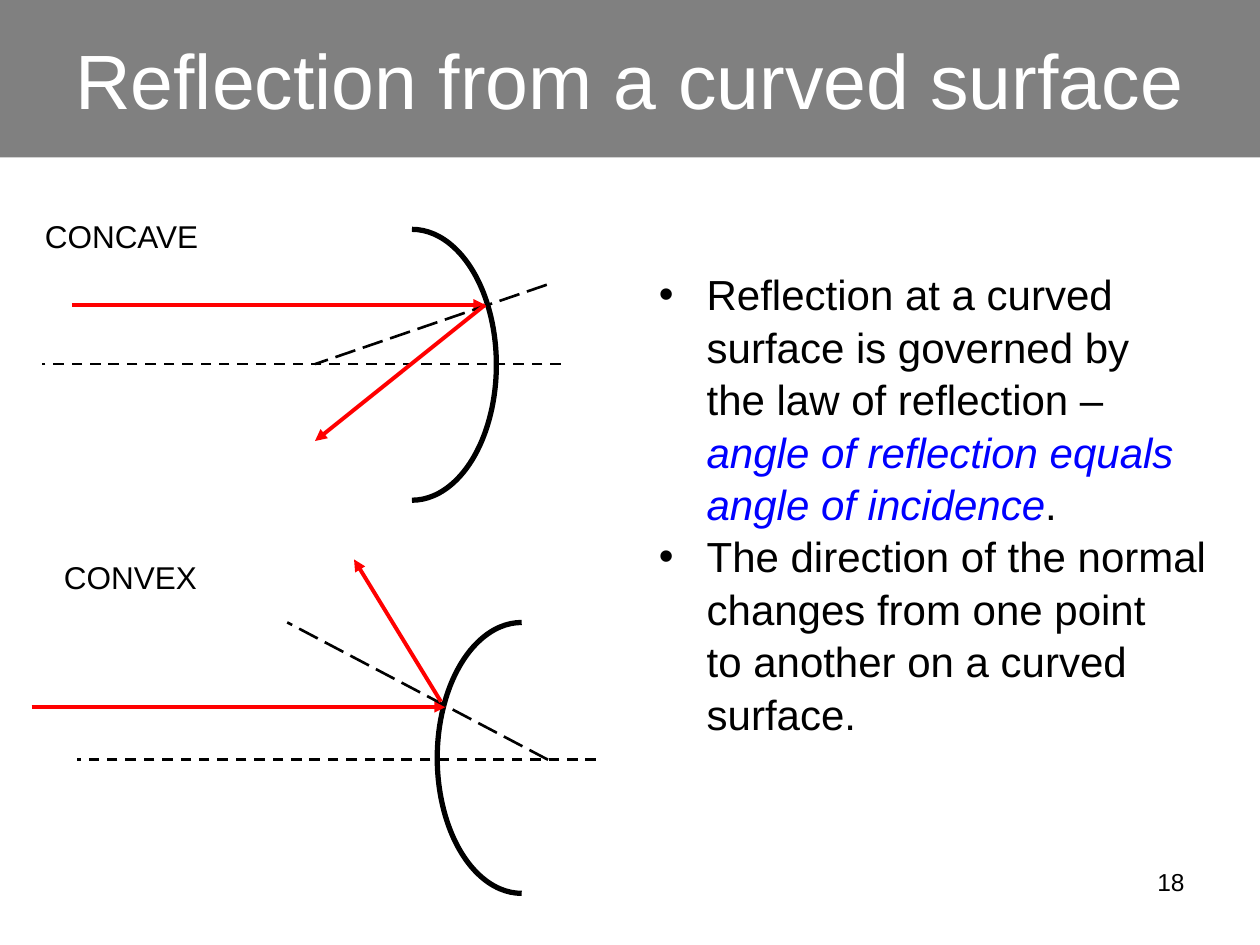
import pptx
import pptx.util
from lxml import etree
from pptx.dml.color import RGBColor
from pptx.enum.dml import MSO_LINE
from pptx.enum.shapes import MSO_CONNECTOR, MSO_SHAPE
from pptx.enum.text import MSO_ANCHOR, MSO_AUTO_SIZE, PP_ALIGN
from pptx.oxml.ns import qn
from pptx.util import Inches, Pt

FONT = "Arial"
BLACK, WHITE, GREY, RED, BLUE = "000000", "FFFFFF", "808080", "FF0000", "0000FF"

TITLE = "Reflection from a curved surface"
PAGE_NUMBER = "18"

# Lines are (start, end) points in inches
MIRRORS = [
    {
        "label": ("CONCAVE", (0.25, 1.67, 1.43, 0.4)),
        "arc": (2.6, 1.82),
        "rotation": 0,
        "axis": ((4.45, 2.89), (0.33, 2.89)),
        "incident": ((0.57, 2.42), (3.85, 2.42)),
        "normal": ((4.34, 2.26), (2.5, 2.89)),
        "reflected": ((3.85, 2.42), (2.5, 3.5)),
    },
    {
        "label": ("CONVEX", (0.4, 4.38, 1.27, 0.4)),
        "arc": (3.47, 4.94),
        "rotation": 180,
        "axis": ((4.73, 6.03), (0.61, 6.03)),
        "incident": ((0.25, 5.61), (3.54, 5.61)),
        "normal": ((4.35, 6.03), (2.28, 4.94)),
        "reflected": ((3.5, 5.57), (2.81, 4.44)),
    },
]
ARC_SIZE = (1.34, 2.15)

# Part: colour, width in points, dash, arrowhead
LINE_STYLES = {
    "axis": (BLACK, 1.5, MSO_LINE.DASH, False),
    "incident": (RED, 2.25, None, True),
    "normal": (BLACK, 1.5, MSO_LINE.LONG_DASH, False),
    "reflected": (RED, 2.25, None, True),
}

# Bullets hold lines, and lines hold (text, emphasised) pieces
BULLETS = [
    [
        [("Reflection at a curved", False)],
        [("surface is governed by", False)],
        [("the law of reflection –", False)],
        [("angle of reflection equals", True)],
        [("angle of incidence", True), (".", False)],
    ],
    [
        [("The direction of the normal", False)],
        [("changes from one point", False)],
        [("to another on a curved", False)],
        [("surface.", False)],
    ],
]
BULLET_INDENT = 0.38


def color(hex_string):
    return RGBColor.from_string(hex_string)


def format_run(run, size, hex_string=BLACK, italic=False):
    run.font.name = FONT
    run.font.size = Pt(size)
    run.font.color.rgb = color(hex_string)
    run.font.italic = italic


def add_text_box(slide, box, wrap=False):
    text_frame = slide.shapes.add_textbox(*map(Inches, box)).text_frame
    text_frame.word_wrap = wrap
    return text_frame


def add_label(slide, text, box, size, alignment, wrap=False):
    text_frame = add_text_box(slide, box, wrap)
    text_frame.text = text
    paragraph = text_frame.paragraphs[0]
    paragraph.alignment = alignment
    format_run(paragraph.runs[0], size)


def add_title(slide):
    title = slide.shapes.title
    title.left, title.top, title.width, title.height = map(Inches, (0, 0, 10, 1.25))
    title.fill.solid()
    title.fill.fore_color.rgb = color(GREY)
    text_frame = title.text_frame
    text_frame.text = TITLE
    text_frame.auto_size = MSO_AUTO_SIZE.NONE
    text_frame.vertical_anchor = MSO_ANCHOR.MIDDLE
    text_frame.paragraphs[0].alignment = PP_ALIGN.CENTER
    format_run(text_frame.paragraphs[0].runs[0], 44, WHITE)


def add_line(group, start, end, style):
    hex_string, width, dash, arrow = style
    connector = group.shapes.add_connector(
        MSO_CONNECTOR.STRAIGHT, *map(Inches, (*start, *end)))
    connector.line.color.rgb = color(hex_string)
    connector.line.width = Pt(width)
    if dash:
        connector.line.dash_style = dash
    properties = connector._element.spPr
    if arrow:
        etree.SubElement(properties.find(qn("a:ln")), qn("a:tailEnd"), type="triangle")
    etree.SubElement(properties, qn("a:effectLst"))


def add_mirror(slide, mirror):
    group = slide.shapes.add_group_shape()
    arc = group.shapes.add_shape(
        MSO_SHAPE.ARC, *map(Inches, mirror["arc"] + ARC_SIZE))
    arc.adjustments[0], arc.adjustments[1] = 162, 54
    arc.rotation = mirror["rotation"]
    arc.shadow.inherit = False
    arc.fill.background()
    arc.line.color.rgb = color(BLACK)
    arc.line.width = Pt(3)
    for part, style in LINE_STYLES.items():
        add_line(group, *mirror[part], style)


def add_bullets(slide):
    text_frame = add_text_box(slide, (5.13, 2.07, 4.59, 4.14))
    for number, lines in enumerate(BULLETS):
        paragraph = text_frame.add_paragraph() if number else text_frame.paragraphs[0]
        paragraph.line_spacing = 1.04
        properties = paragraph._p.get_or_add_pPr()
        properties.set("marL", str(Inches(BULLET_INDENT)))
        properties.set("indent", str(-Inches(BULLET_INDENT)))
        etree.SubElement(properties, qn("a:buFont"), typeface=FONT)
        etree.SubElement(properties, qn("a:buChar"), char="•")
        for line_number, pieces in enumerate(lines):
            if line_number:
                paragraph.add_line_break()
            for text, emphasised in pieces:
                run = paragraph.add_run()
                run.text = text
                format_run(run, 24, BLUE if emphasised else BLACK, emphasised)


def main():
    presentation = pptx.Presentation()
    presentation.slide_width = Inches(10)
    presentation.slide_height = Inches(7.5)
    slide = presentation.slides.add_slide(presentation.slide_layouts[5])
    add_title(slide)
    add_label(slide, PAGE_NUMBER, (7.17, 6.83, 2.33, 0.52), 14, PP_ALIGN.RIGHT, wrap=True)
    for mirror in MIRRORS:
        add_mirror(slide, mirror)
    for mirror in MIRRORS:
        add_label(slide, *mirror["label"], 18, PP_ALIGN.CENTER)
    add_bullets(slide)
    presentation.save("out.pptx")


if __name__ == "__main__":
    main()
